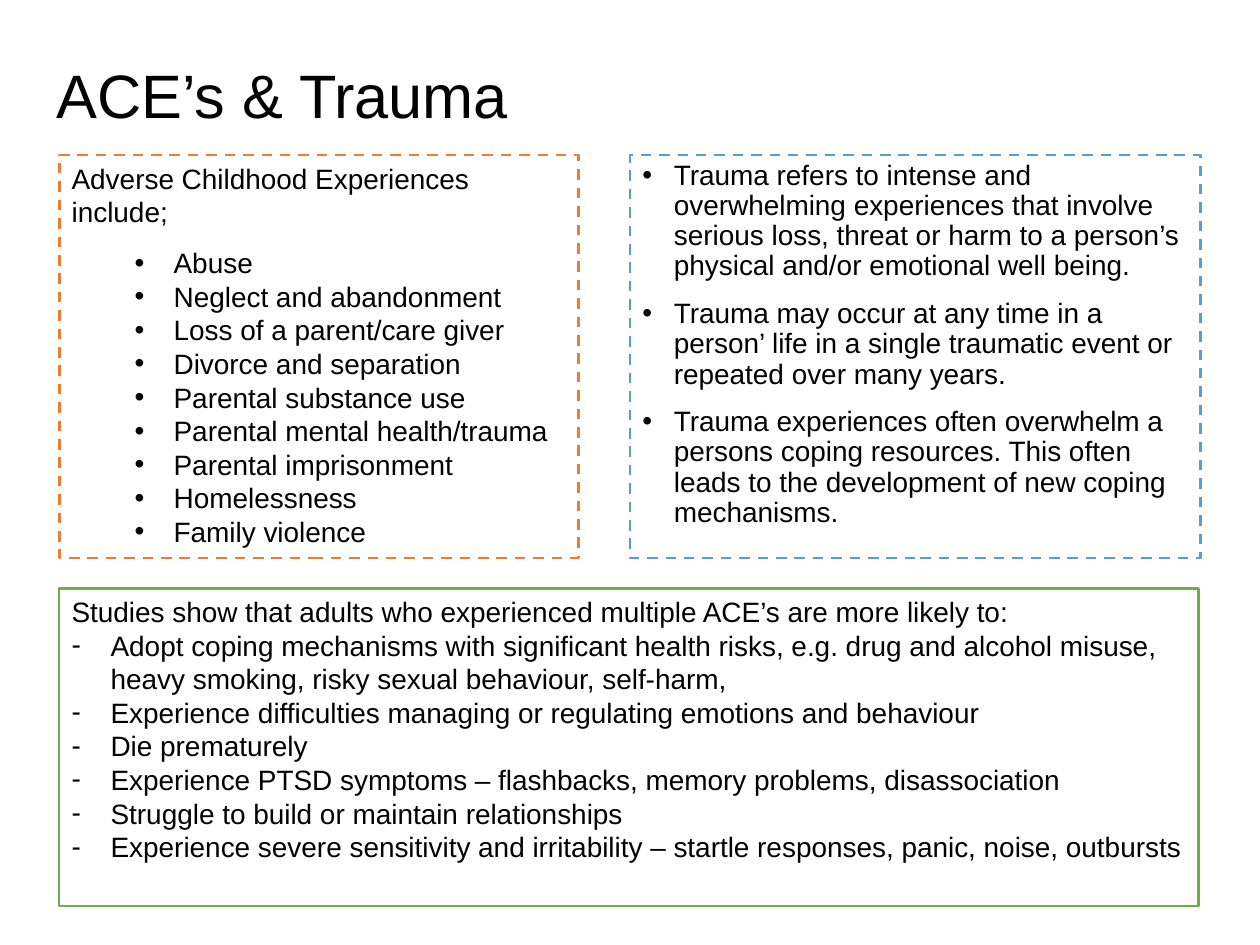
from lxml.etree import SubElement
from pptx import Presentation
from pptx.dml.color import RGBColor
from pptx.enum.dml import MSO_LINE
from pptx.enum.shapes import MSO_SHAPE
from pptx.enum.text import MSO_ANCHOR, PP_ALIGN
from pptx.oxml.ns import qn
from pptx.util import Inches, Pt

BLACK = RGBColor(0x00, 0x00, 0x00)
BLUE = RGBColor(0x5B, 0x9B, 0xD5)
ORANGE = RGBColor(0xED, 0x7D, 0x31)
GREEN = RGBColor(0x70, 0xAD, 0x47)


def write_paragraphs(text_frame, lines, size):
    text_frame.word_wrap = True
    text_frame.text = "\n".join(lines)
    for paragraph in text_frame.paragraphs:
        paragraph.alignment = PP_ALIGN.LEFT
        for run in paragraph.runs:
            run.font.name = "Arial"
            run.font.size = Pt(size)
            run.font.color.rgb = BLACK


def add_bullet(paragraph, character, margin, hanging):
    properties = paragraph._p.get_or_add_pPr()
    properties.set("marL", str(Inches(margin)))
    properties.set("indent", str(-Inches(hanging)))
    SubElement(properties, qn("a:buFont")).set("typeface", "Arial")
    SubElement(properties, qn("a:buChar")).set("char", character)


trauma_lines = [
    "Trauma refers to intense and overwhelming experiences that involve serious loss, "
    "threat or harm to a person’s physical and/or emotional well being.",
    "Trauma may occur at any time in a person’ life in a single traumatic event or "
    "repeated over many years.",
    "Trauma experiences often overwhelm a persons coping resources. This often leads to "
    "the development of new coping mechanisms.",
]
experience_lines = [
    "Adverse Childhood Experiences include;",
    "Abuse",
    "Neglect and abandonment",
    "Loss of a parent/care giver",
    "Divorce and separation",
    "Parental substance use",
    "Parental mental health/trauma",
    "Parental imprisonment",
    "Homelessness",
    "Family violence",
]
outcome_lines = [
    "Studies show that adults who experienced multiple ACE’s are more likely to:",
    "Adopt coping mechanisms with significant health risks, e.g. drug and alcohol misuse, "
    "heavy smoking, risky sexual behaviour, self-harm,",
    "Experience difficulties managing or regulating emotions and behaviour",
    "Die prematurely",
    "Experience PTSD symptoms – flashbacks, memory problems, disassociation",
    "Struggle to build or maintain relationships",
    "Experience severe sensitivity and irritability – startle responses, panic, noise, outbursts",
]

presentation = Presentation()
presentation.slide_width = Inches(10)
presentation.slide_height = Inches(7.5)
slide = presentation.slides.add_slide(presentation.slide_layouts[6])

title = slide.shapes.add_textbox(Inches(0.35), Inches(0.21), Inches(9.29), Inches(1.15))
title.text_frame.vertical_anchor = MSO_ANCHOR.MIDDLE
write_paragraphs(title.text_frame, ["ACE’s & Trauma"], 35)
title.text_frame.paragraphs[0].line_spacing = 0.9

panels = [
    (5, 1.23, 4.53, 3.2, BLUE, MSO_LINE.DASH, trauma_lines, 0, "•", 0.25, 0.25),
    (0.47, 1.23, 4.12, 3.2, ORANGE, MSO_LINE.DASH, experience_lines, 1, "•", 0.81, 0.31),
    (0.47, 4.67, 9.04, 2.52, GREEN, MSO_LINE.SOLID, outcome_lines, 1, "-", 0.31, 0.31),
]
frames = []
for left, top, width, height, color, dash, lines, intro_count, character, margin, hanging in panels:
    shape = slide.shapes.add_shape(
        MSO_SHAPE.RECTANGLE, Inches(left), Inches(top), Inches(width), Inches(height)
    )
    shape.shadow.inherit = False
    shape.fill.background()
    shape.line.color.rgb = color
    shape.line.width = Pt(1.5)
    shape.line.dash_style = dash
    shape.text_frame.vertical_anchor = MSO_ANCHOR.TOP
    write_paragraphs(shape.text_frame, lines, 16)
    for paragraph in shape.text_frame.paragraphs[intro_count:]:
        add_bullet(paragraph, character, margin, hanging)
    frames.append(shape.text_frame)

trauma_frame, experience_frame, outcome_frame = frames
for paragraph in trauma_frame.paragraphs:
    paragraph.line_spacing = 0.9
    paragraph.space_before = Pt(10)
experience_frame.paragraphs[0].space_after = Pt(10)
for paragraph in experience_frame.paragraphs[1:]:
    paragraph.level = 1

presentation.save("out.pptx")
